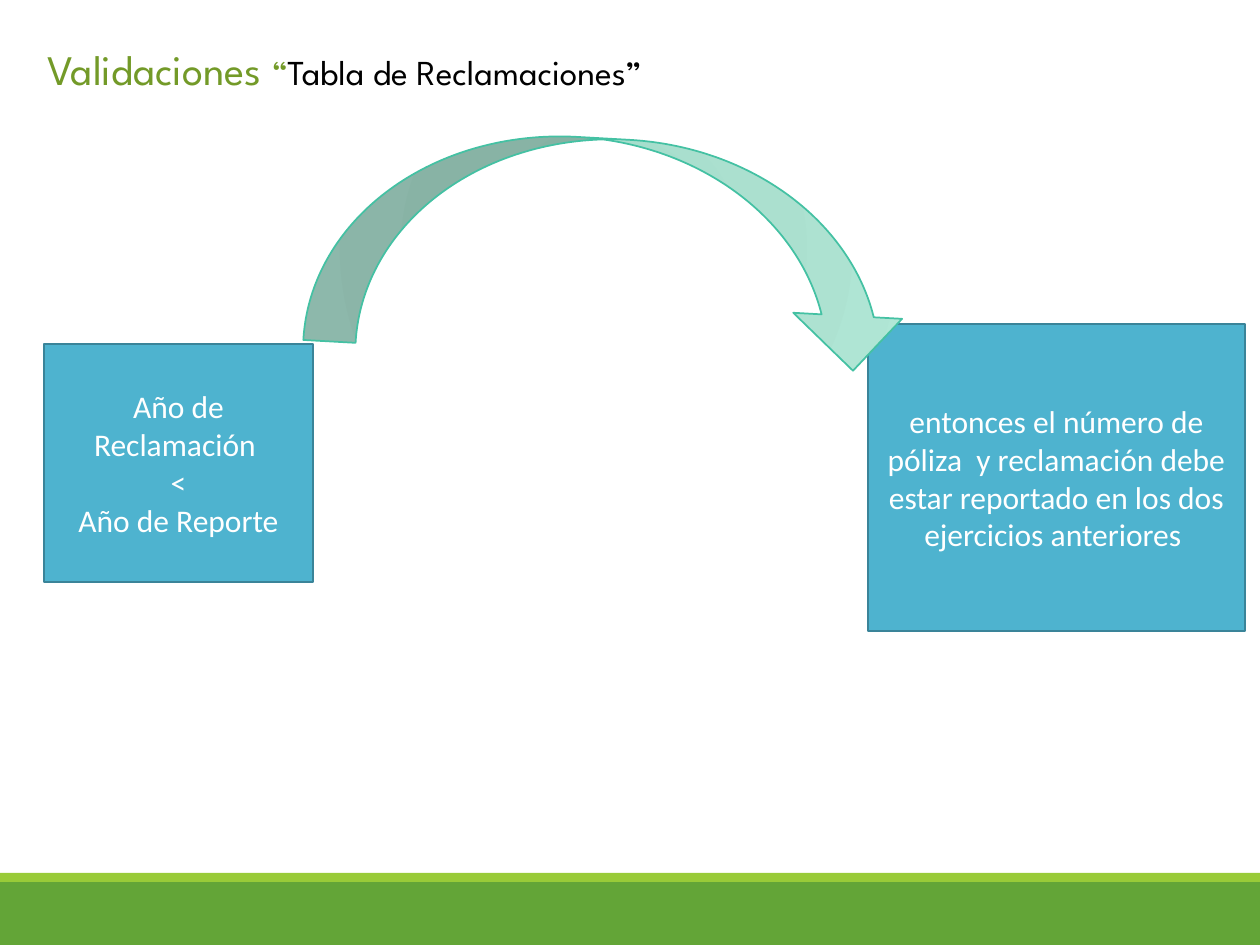
from dataclasses import dataclass
from lxml.etree import SubElement
from pptx import Presentation
from pptx.dml.color import RGBColor
from pptx.enum.shapes import MSO_SHAPE
from pptx.enum.text import MSO_ANCHOR, PP_ALIGN
from pptx.oxml.ns import qn
from pptx.util import Emu, Pt

PX = 914400 // 126


@dataclass
class Box:
    x: int
    y: int
    w: int
    h: int
    fill: str
    line: str = ""
    weight: float = 1.25
    kind: MSO_SHAPE = MSO_SHAPE.FLOWCHART_PROCESS
    lines: tuple[str, ...] = ()


BANDS = [
    Box(0, 882, 1260, 63, "63A537", kind=MSO_SHAPE.RECTANGLE),
    Box(0, 873, 1260, 9, "99CB38", kind=MSO_SHAPE.RECTANGLE),
]
STEPS = [
    Box(44, 344, 269, 238, "4EB3CF", "3A8499",
        lines=("Año de Reclamación ", "<", "Año de Reporte")),
    Box(868, 324, 377, 307, "4EB3CF", "3A8499",
        lines=("entonces el número de póliza  y reclamación debe estar "
               "reportado en los dos ejercicios anteriores ",)),
]
ARROW = Box(309, 139, 605, 218, "ABE0CF", "44C1A3", 1, MSO_SHAPE.CURVED_DOWN_ARROW)
ARROW_STOPS = [(0, "9AD9C5"), (45, "ABE0CF"), (100, "B1E7D6")]


def px(n: int) -> Emu:
    return Emu(n * PX)


def rgb(color: str) -> RGBColor:
    return RGBColor.from_string(color)


def add_text(p, text: str, *, size: int, font: str, color: str) -> None:
    r = p.add_run()
    r.text = text
    r.font.size = Pt(size)
    r.font.name = font
    r.font.bold = False
    r.font.color.rgb = rgb(color)


def add_box(s, box: Box):
    sp = s.shapes.add_shape(box.kind, px(box.x), px(box.y), px(box.w), px(box.h))
    sp.shadow.inherit = False
    sp.fill.solid()
    sp.fill.fore_color.rgb = rgb(box.fill)
    if box.line:
        sp.line.color.rgb = rgb(box.line)
        sp.line.width = Pt(box.weight)
    else:
        sp.line.fill.background()
    tf = sp.text_frame
    tf.word_wrap = True
    tf.vertical_anchor = MSO_ANCHOR.MIDDLE
    for i, text in enumerate(box.lines):
        p = tf.add_paragraph() if i else tf.paragraphs[0]
        p.alignment = PP_ALIGN.CENTER
        add_text(p, text, size=18, font="Calibri", color="FFFFFF")
    return sp


def set_radial_fill(sp, stops: list[tuple[int, str]]) -> None:
    spPr = sp._element.spPr
    solid = spPr.find(qn("a:solidFill"))
    grad = SubElement(spPr, qn("a:gradFill"), rotWithShape="1")
    spPr.replace(solid, grad)
    gs_list = SubElement(grad, qn("a:gsLst"))
    for pos, color in stops:
        gs = SubElement(gs_list, qn("a:gs"), pos=str(pos * 1000))
        SubElement(gs, qn("a:srgbClr"), val=color)
    path = SubElement(grad, qn("a:path"), path="circle")
    SubElement(path, qn("a:fillToRect"), {side: "100000" for side in "ltrb"})


def add_title(s) -> None:
    sp = s.shapes.title
    sp.left, sp.top, sp.width, sp.height = px(35), px(37), px(1101), px(106)
    tf = sp.text_frame
    tf.word_wrap = True
    tf.vertical_anchor = MSO_ANCHOR.TOP
    p = tf.paragraphs[0]
    p.alignment = PP_ALIGN.JUSTIFY
    for text, size, color in [
        ("Validaciones ", 24, "739A28"),
        ("“", 20, "739A28"),
        ("Tabla de Reclamaciones”", 20, "000000"),
    ]:
        add_text(p, text, size=size, font="League Spartan", color=color)


def main() -> None:
    prs = Presentation()
    prs.slide_width, prs.slide_height = px(1260), px(945)
    s = prs.slides.add_slide(prs.slide_layouts[5])
    add_title(s)
    for box in BANDS + STEPS:
        add_box(s, box)
    arrow = add_box(s, ARROW)
    arrow.rotation = 3.2
    arrow.adjustments[0] = 0.24
    set_radial_fill(arrow, ARROW_STOPS)
    prs.save("out.pptx")


if __name__ == "__main__":
    main()
